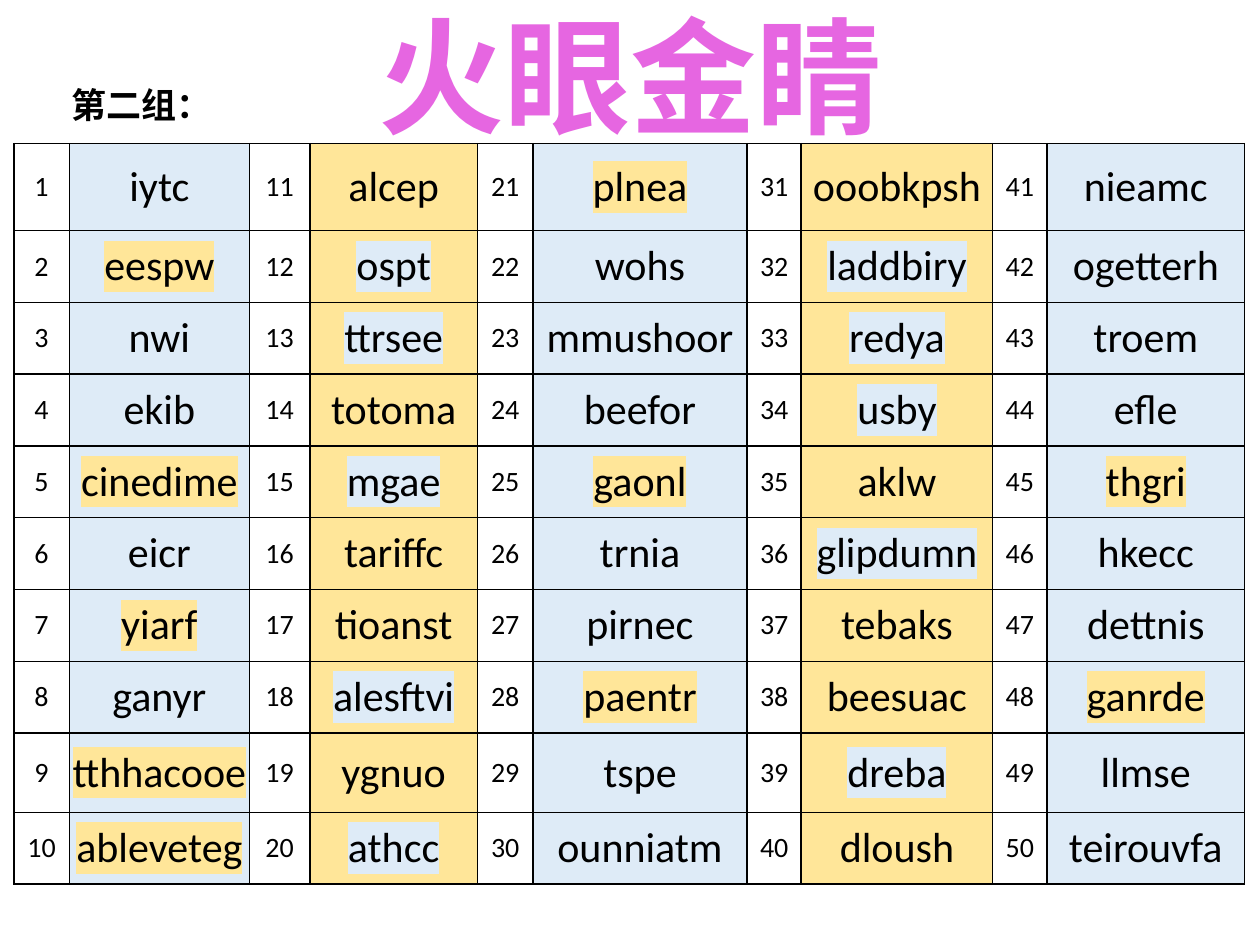
import pptx
import pptx.util
import pptx.dml.color
import pptx.enum.text
import pptx.oxml
import pptx.oxml.ns
from pptx.util import Inches

RGBColor = pptx.dml.color.RGBColor
BLACK = RGBColor(0x00, 0x00, 0x00)
BLUE = RGBColor(0xDE, 0xEB, 0xF7)
YELLOW = RGBColor(0xFF, 0xE6, 0x99)
PINK = RGBColor(0xE6, 0x66, 0xE1)
ALIGN = pptx.enum.text.PP_ALIGN
NS = pptx.oxml.ns.nsdecls("a")


def put_text(tf, text, size, color=BLACK, bold=False, align=ALIGN.CENTER, highlight=None):
    p = tf.paragraphs[0]
    p.alignment = align
    r = p.add_run()
    r.text = text
    r.font.size = pptx.util.Pt(size)
    r.font.name = "Calibri"
    r.font.bold = bold
    r.font.color.rgb = color
    if highlight is not None:
        mark = f'<a:highlight {NS}><a:srgbClr val="{highlight}"/></a:highlight>'
        latin = r.font._element.find(pptx.oxml.ns.qn("a:latin"))
        latin.addprevious(pptx.oxml.parse_xml(mark))


def add_borders(cell):
    tcPr = cell._tc.get_or_add_tcPr()
    for side in ("lnL", "lnR", "lnT", "lnB"):
        tcPr.append(pptx.oxml.parse_xml(
            f'<a:{side} {NS} w="12700"><a:solidFill><a:srgbClr val="{BLACK}"/>'
            f'</a:solidFill></a:{side}>'))


word_columns = [
    "iytc eespw nwi ekib cinedime eicr yiarf ganyr tthhacooe ableveteg".split(),
    "alcep ospt ttrsee totoma mgae tariffc tioanst alesftvi ygnuo athcc".split(),
    "plnea wohs mmushoor beefor gaonl trnia pirnec paentr tspe ounniatm".split(),
    "ooobkpsh laddbiry redya usby aklw glipdumn tebaks beesuac dreba dloush".split(),
    "nieamc ogetterh troem efle thgri hkecc dettnis ganrde llmse teirouvfa".split(),
]
yellow_words = set(
    "eespw cinedime yiarf tthhacooe ableveteg alcep totoma tariffc tioanst ygnuo "
    "plnea gaonl paentr ooobkpsh aklw tebaks beesuac dloush thgri ganrde".split())
col_widths = [0.44, 1.43, 0.48, 1.33, 0.44, 1.7, 0.43, 1.52, 0.43, 1.57]
row_heights = [0.69] + [0.57] * 7 + [0.63, 0.57]

prs = pptx.Presentation()
prs.slide_width = Inches(10)
prs.slide_height = Inches(7.5)
s = prs.slides.add_slide(prs.slide_layouts[6])

table = s.shapes.add_table(10, 10, Inches(0.11), Inches(1.14), Inches(9.77), Inches(5.9)).table
table.first_row = False
table.horz_banding = False
for col, width in zip(table.columns, col_widths):
    col.width = Inches(width)
for row, height in zip(table.rows, row_heights):
    row.height = Inches(height)

for c, words in enumerate(word_columns):
    column_color = YELLOW if c % 2 else BLUE
    for i, word in enumerate(words):
        number_cell = table.cell(i, 2 * c)
        word_cell = table.cell(i, 2 * c + 1)
        for cell in (number_cell, word_cell):
            cell.vertical_anchor = pptx.enum.text.MSO_ANCHOR.MIDDLE
            add_borders(cell)
        number_cell.fill.background()
        put_text(number_cell.text_frame, str(10 * c + i + 1), 16)
        word_cell.margin_left = word_cell.margin_right = 0
        word_cell.margin_top = word_cell.margin_bottom = 0
        word_cell.fill.solid()
        word_cell.fill.fore_color.rgb = column_color
        put_text(word_cell.text_frame, word, 24,
                 highlight=YELLOW if word in yellow_words else BLUE)

group_box = s.shapes.add_textbox(Inches(0.47), Inches(0.61), Inches(2.84), Inches(0.43))
group_box.text_frame.word_wrap = True
put_text(group_box.text_frame, "第二组：", 20, bold=True, align=ALIGN.LEFT)

title_box = s.shapes.add_textbox(Inches(2.89), Inches(-0.06), Inches(4.22), Inches(1.3))
title_box.text_frame.word_wrap = False
put_text(title_box.text_frame, "火眼金睛", 72, color=PINK, bold=True)

prs.save("out.pptx")
